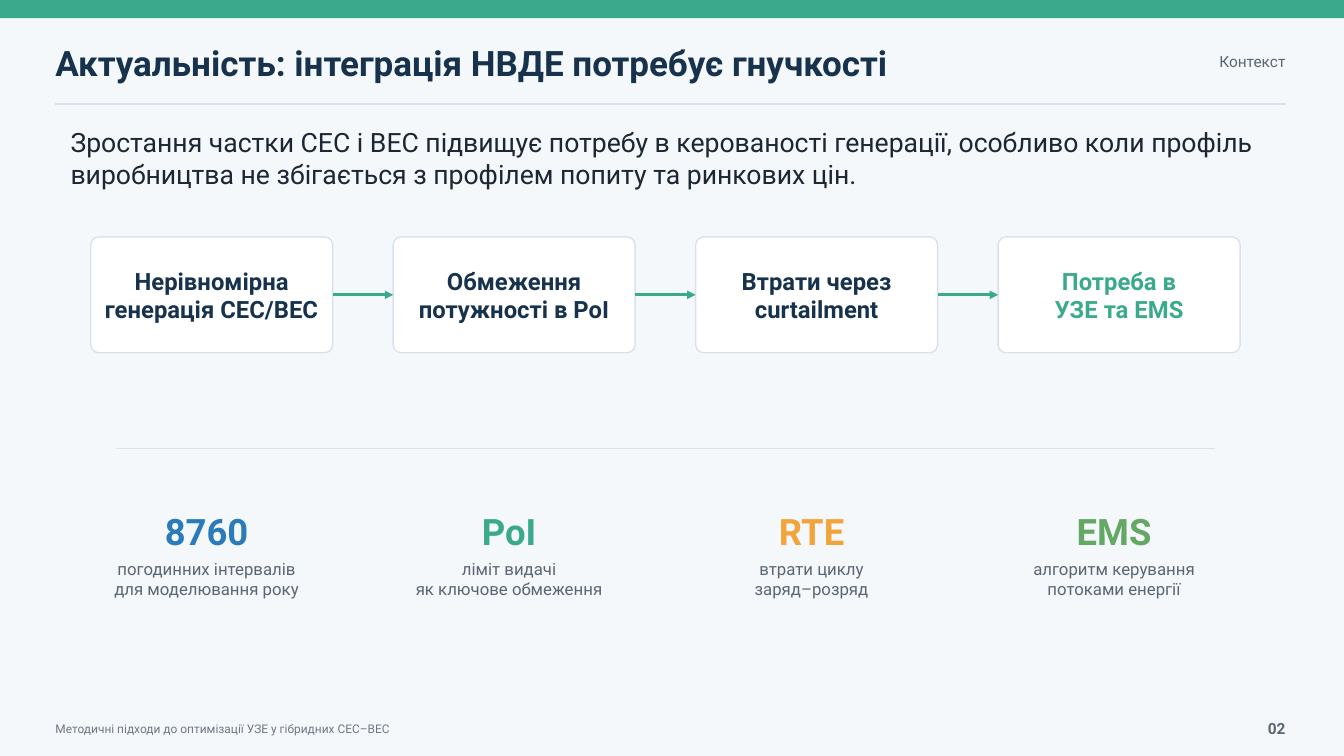
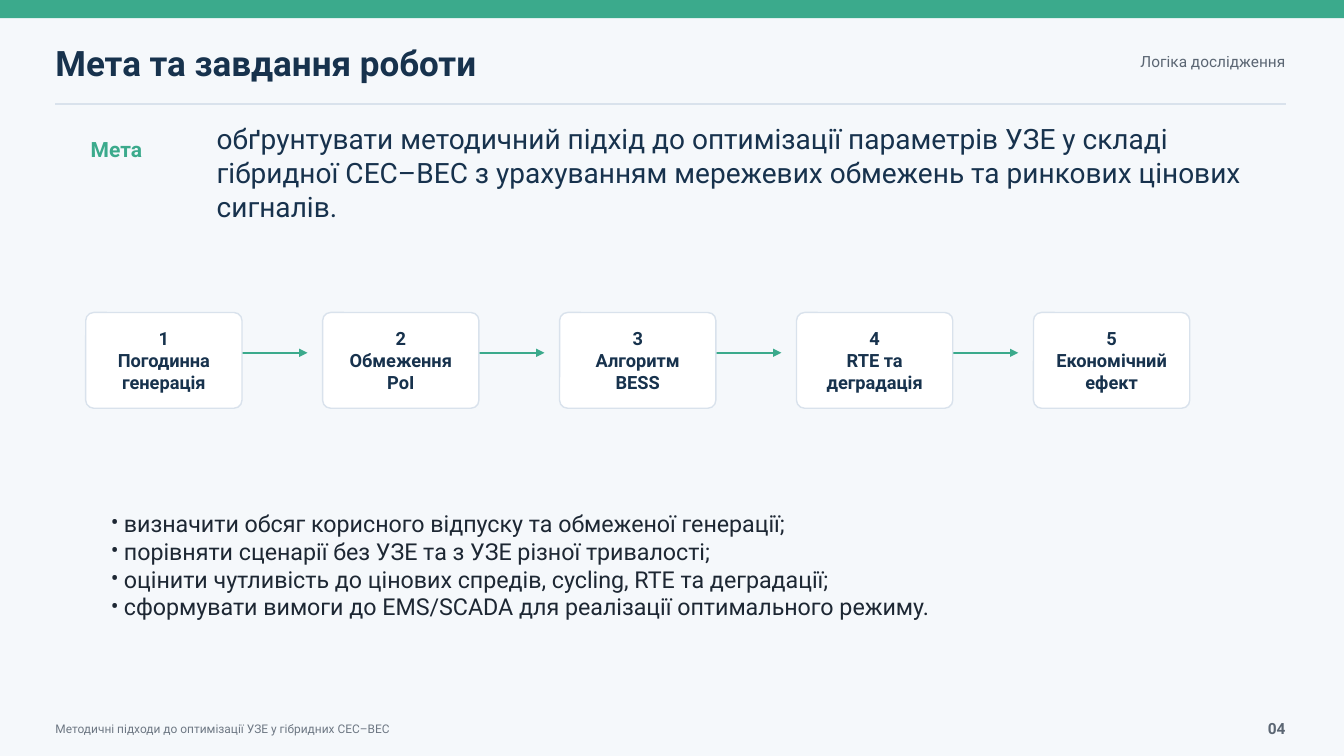
import pptx
import pptx.dml.color
import pptx.enum.shapes
import pptx.enum.text
import pptx.oxml.ns
import pptx.util
import lxml.etree

RGB = pptx.dml.color.RGBColor
SHAPE = pptx.enum.shapes.MSO_SHAPE
ALIGN = pptx.enum.text.PP_ALIGN
ANCHOR = pptx.enum.text.MSO_ANCHOR
qn = pptx.oxml.ns.qn

PAPER = RGB(0xF5, 0xF8, 0xFB)
WHITE = RGB(0xFF, 0xFF, 0xFF)
GREEN = RGB(0x3B, 0xAA, 0x8C)
NAVY = RGB(0x17, 0x32, 0x4D)
INK = RGB(0x1D, 0x27, 0x33)
GREY = RGB(0x5B, 0x66, 0x73)
PALE = RGB(0x6D, 0x77, 0x83)
RULE = RGB(0xD9, 0xE2, 0xEC)
BLUE = RGB(0x2B, 0x7B, 0xBB)
AMBER = RGB(0xF2, 0xA3, 0x3A)
LEAF = RGB(0x65, 0xA7, 0x65)

FONT = "Roboto"
WIDE, HIGH = 1333, 750
FOOTER = "Методичні підходи до оптимізації УЗЕ у гібридних СЕС–ВЕС"


def px(*sizes):
    """Turn lengths of 1/100 inch into EMU."""
    return [pptx.util.Emu(size * 9144) for size in sizes]


# Elements

def add_bullet(para, indent):
    props = para._p.get_or_add_pPr()
    props.set("marL", str(px(indent)[0]))
    props.set("indent", str(-px(indent)[0]))
    lxml.etree.SubElement(props, qn("a:buFont"), typeface=FONT)
    lxml.etree.SubElement(props, qn("a:buChar"), char="•")


def write(shape, text, size, color, bold=False, align=ALIGN.LEFT,
          anchor=ANCHOR.MIDDLE, bullet=0):
    frame = shape.text_frame
    frame.word_wrap = True
    frame.vertical_anchor = anchor
    frame.margin_left = frame.margin_right = 0
    frame.margin_top = frame.margin_bottom = 0
    frame.text = text
    for para in frame.paragraphs:
        para.alignment = align
        if bullet:
            add_bullet(para, bullet)
        font = para.font
        font.name, font.size, font.bold = FONT, pptx.util.Pt(size), bold
        font.color.rgb = color


def add_text(slide, box, text, size, color, **style):
    write(slide.shapes.add_textbox(*px(*box)), text, size, color, **style)


def add_box(slide, kind, box, fill):
    shape = slide.shapes.add_shape(kind, *px(*box))
    shape.shadow.inherit = False
    shape.fill.solid()
    shape.fill.fore_color.rgb = fill
    shape.line.fill.background()
    return shape


def add_card(slide, box, text, size, color, round_by):
    card = add_box(slide, SHAPE.ROUNDED_RECTANGLE, box, WHITE)
    card.adjustments[0] = round_by
    card.line.color.rgb = RULE
    card.line.width = pptx.util.Pt(1)
    write(card, text, size, color, bold=True, align=ALIGN.CENTER)
    return card


def add_line(slide, left, right, y, color=RULE, width=1):
    line = slide.shapes.add_connector(
        pptx.enum.shapes.MSO_CONNECTOR.STRAIGHT, *px(left, y, right, y))
    line.line.color.rgb = color
    line.line.width = pptx.util.Pt(width)
    lxml.etree.SubElement(line._element.spPr, qn("a:effectLst"))
    return line


def add_arrow(slide, left, right, y, width):
    arrow = add_line(slide, left, right, y, GREEN, width)
    lxml.etree.SubElement(arrow.line._get_or_add_ln(), qn("a:tailEnd"),
                          type="triangle")
    return arrow


# Shared frame: band, title, section, rule and footer

def add_slide(deck, title, section, number):
    slide = deck.slides.add_slide(deck.slide_layouts[6])
    slide.background.fill.solid()
    slide.background.fill.fore_color.rgb = PAPER
    add_box(slide, SHAPE.RECTANGLE, (0, 0, WIDE, 18), GREEN)
    add_text(slide, (55, 35, 940, 54), title, 25, NAVY, bold=True)
    add_text(slide, (1030, 43, 245, 35), section, 11, GREY, align=ALIGN.RIGHT)
    add_line(slide, 55, 1275, 103)
    add_text(slide, (55, 712, 850, 22), FOOTER, 8.5, PALE)
    add_text(slide, (1220, 705, 55, 35), number, 11, GREY, bold=True,
             align=ALIGN.RIGHT)
    return slide


def context_slide(deck):
    slide = add_slide(deck, "Актуальність: інтеграція НВДЕ потребує гнучкості",
                      "Контекст", "02")
    add_text(slide, (70, 125, 1190, 62),
             "Зростання частки СЕС і ВЕС підвищує потребу в керованості "
             "генерації, особливо коли профіль виробництва не збігається "
             "з профілем попиту та ринкових цін.",
             19, INK, anchor=ANCHOR.TOP)

    # Chain of causes
    step = 300
    causes = [("Нерівномірна\nгенерація СЕС/ВЕС", NAVY),
              ("Обмеження\nпотужності в PoI", NAVY),
              ("Втрати через\ncurtailment", NAVY),
              ("Потреба в\nУЗЕ та EMS", GREEN)]
    cards = [add_card(slide, (90 + i * step, 235, 240, 115), text, 17, color,
                      0.07)
             for i, (text, color) in enumerate(causes)]
    for i, (card, after) in enumerate(zip(cards, cards[1:])):
        arrow = add_arrow(slide, 330 + i * step, 390 + i * step, 292, 2)
        arrow.begin_connect(card, 3)
        arrow.end_connect(after, 1)

    # Key terms
    add_line(slide, 115, 1205, 445, width=1.1)
    terms = [("8760", BLUE, "погодинних інтервалів\nдля моделювання року"),
             ("PoI", GREEN, "ліміт видачі\nяк ключове обмеження"),
             ("RTE", AMBER, "втрати циклу\nзаряд–розряд"),
             ("EMS", LEAF, "алгоритм керування\nпотоками енергії")]
    for i, (term, color, note) in enumerate(terms):
        left = 100 + i * step
        add_text(slide, (left, 503, 210, 48), term, 26, color, bold=True,
                 align=ALIGN.CENTER)
        add_text(slide, (left, 553, 210, 42), note, 12, GREY,
                 align=ALIGN.CENTER)


def goal_slide(deck):
    slide = add_slide(deck, "Мета та завдання роботи", "Логіка дослідження",
                      "04")
    add_text(slide, (90, 133, 100, 30), "Мета", 15, GREEN, bold=True)
    add_text(slide, (215, 121, 1020, 66),
             "обґрунтувати методичний підхід до оптимізації параметрів УЗЕ "
             "у складі гібридної СЕС–ВЕС з урахуванням мережевих обмежень "
             "та ринкових цінових сигналів.",
             20, NAVY, anchor=ANCHOR.TOP)

    # Stages, with the arrows behind the cards
    stages = ["Погодинна\nгенерація", "Обмеження\nPoI", "Алгоритм\nBESS",
              "RTE та\nдеградація", "Економічний\nефект"]
    lefts = [85 + i * 235 for i in range(len(stages))]
    for left in lefts[:-1]:
        add_arrow(slide, left + 145, left + 220, 350, 1.8)
    for i, (left, stage) in enumerate(zip(lefts, stages), 1):
        add_card(slide, (left, 310, 155, 95), f"{i}\n{stage}", 13, NAVY, 0.084)

    # Tasks
    tasks = ["визначити обсяг корисного відпуску та обмеженої генерації;",
             "порівняти сценарії без УЗЕ та з УЗЕ різної тривалості;",
             "оцінити чутливість до цінових спредів, cycling, RTE та "
             "деградації;",
             "сформувати вимоги до EMS/SCADA для реалізації оптимального "
             "режиму."]
    add_text(slide, (110, 505, 1120, 105), "\n".join(tasks), 16.6, INK,
             anchor=ANCHOR.TOP, bullet=13)


def main():
    deck = pptx.Presentation()
    deck.slide_width, deck.slide_height = px(WIDE, HIGH)
    context_slide(deck)
    goal_slide(deck)
    deck.save("out.pptx")


if __name__ == "__main__":
    main()
